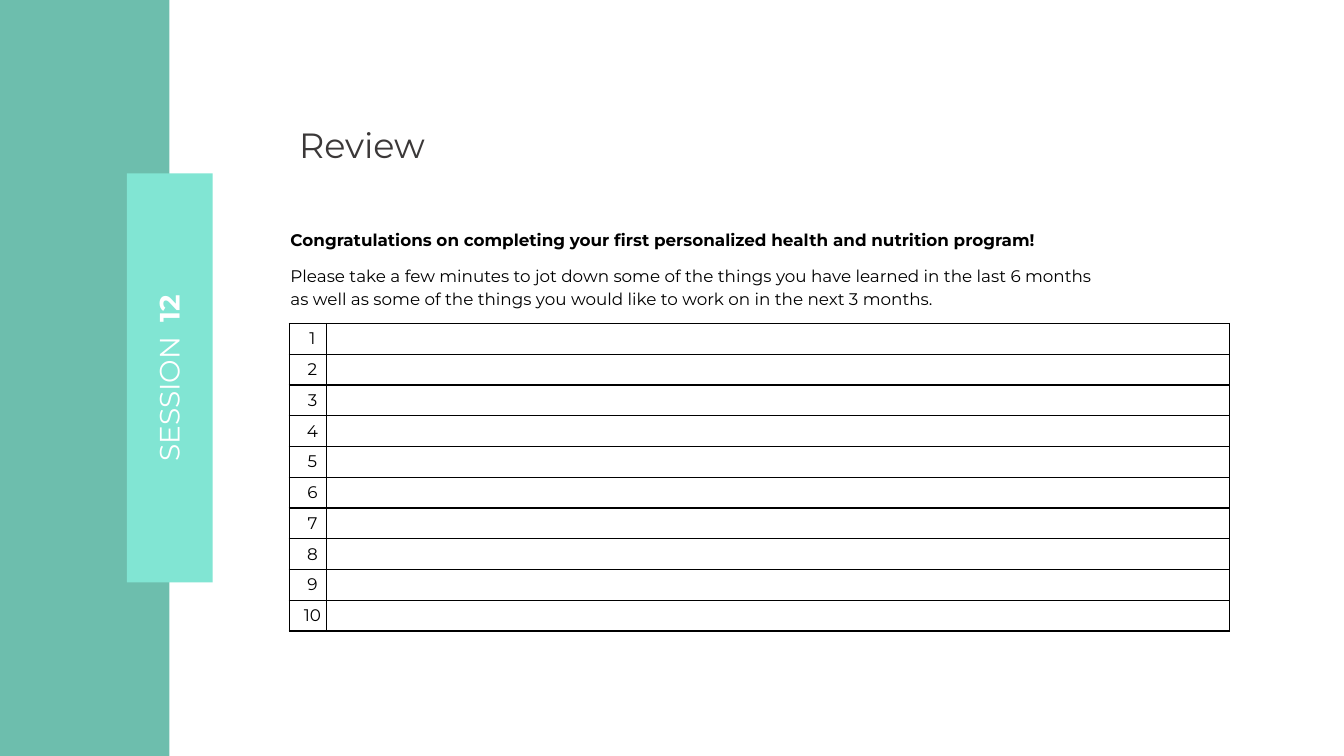
from dataclasses import dataclass

from lxml.etree import SubElement
from pptx import Presentation
from pptx.dml.color import RGBColor
from pptx.enum.shapes import MSO_SHAPE
from pptx.enum.text import MSO_ANCHOR, MSO_AUTO_SIZE, PP_ALIGN
from pptx.oxml.ns import qn
from pptx.util import Cm, Pt


@dataclass(frozen=True)
class Theme:
    """Fonts, colours and type sizes of the slide."""
    font: str = "Montserrat"
    band: str = "6DBEAD"
    tab: str = "81E5D3"
    light: str = "FFFFFF"
    heading: str = "3B3838"
    ink: str = "000000"
    session_size: int = 20
    heading_size: int = 25
    body_size: int = 12
    rule_width: int = 1


THEME = Theme()


def write(paragraph, text, size=THEME.body_size, color=THEME.ink, bold=False, spacing=0):
    """Add a formatted run, with letter spacing in points."""
    run = paragraph.add_run()
    run.text = text
    run.font.name = THEME.font
    run.font.size = Pt(size)
    run.font.bold = bold
    run.font.color.rgb = RGBColor.from_string(color)
    if spacing:
        run.font._element.set("spc", str(round(spacing * 100)))


def indent(paragraph, margin):
    """Set the left margin of a paragraph."""
    paragraph._p.get_or_add_pPr().set("marL", str(Cm(margin)))


class Page:
    """One slide and the theme it is drawn with."""

    def __init__(self, slide, theme):
        """Keep the slide and its theme."""
        self.slide = slide
        self.theme = theme

    def block(self, left, top, width, height, color):
        """Draw a plain filled rectangle."""
        block = self.slide.shapes.add_shape(
            MSO_SHAPE.RECTANGLE, Cm(left), Cm(top), Cm(width), Cm(height))
        block.shadow.inherit = False
        block.fill.solid()
        block.fill.fore_color.rgb = RGBColor.from_string(color)
        block.line.fill.background()

    def text(self, left, top, width, height, rotation=0, wrap=True, inset=None, grow=False):
        """Add a text box and return its text frame."""
        box = self.slide.shapes.add_textbox(Cm(left), Cm(top), Cm(width), Cm(height))
        box.rotation = rotation
        frame = box.text_frame
        frame.word_wrap = wrap
        frame.auto_size = MSO_AUTO_SIZE.SHAPE_TO_FIT_TEXT if grow else MSO_AUTO_SIZE.NONE
        if inset is not None:
            frame.margin_left = frame.margin_right = Cm(inset)
            frame.margin_top = frame.margin_bottom = Cm(inset)
        return frame

    def rule(self, cell):
        """Draw all four borders of a cell and leave it unfilled."""
        properties = cell._tc.get_or_add_tcPr()
        for side in ("a:lnL", "a:lnR", "a:lnT", "a:lnB"):
            border = SubElement(properties, qn(side), w=str(Pt(self.theme.rule_width)))
            SubElement(SubElement(border, qn("a:solidFill")), qn("a:srgbClr"), val=self.theme.ink)
        cell.fill.background()

    def numbered_lines(self, left, top, widths, height, count):
        """Add a table of numbered empty lines to write on."""
        lines = self.slide.shapes.add_table(
            count, len(widths), Cm(left), Cm(top), Cm(sum(widths)), Cm(height)).table
        lines.first_row = lines.horz_banding = False
        for column, width in zip(lines.columns, widths):
            column.width = Cm(width)
        for number, row in enumerate(lines.rows, start=1):
            row.height = Cm(height / count)
            for cell, label in zip(row.cells, (str(number), "")):
                self.rule(cell)
                cell.margin_left = cell.margin_right = 0
                cell.margin_top = cell.margin_bottom = 0
                cell.vertical_anchor = MSO_ANCHOR.MIDDLE
                paragraph = cell.text_frame.paragraphs[0]
                paragraph.alignment = PP_ALIGN.CENTER
                indent(paragraph, 0.23)
                write(paragraph, label, spacing=-0.1 if len(label) > 1 else 0)


def main():
    """Build and save the review slide."""
    deck = Presentation()
    deck.slide_width, deck.slide_height = Cm(33.87), Cm(19.05)
    page = Page(deck.slides.add_slide(deck.slide_layouts[6]), THEME)

    page.block(0, 0, 4.27, 19.05, THEME.band)
    page.block(3.2, 4.37, 2.16, 10.31, THEME.tab)

    session = page.text(1.88, 8.97, 4.75, 1.12, rotation=270, wrap=False, grow=True).paragraphs[0]
    session.alignment = PP_ALIGN.CENTER
    for part, bold, spacing in (("SESSION", False, 0), (" ", False, 5.2), ("12", True, 0)):
        write(session, part, size=THEME.session_size, color=THEME.light, bold=bold, spacing=spacing)

    heading = page.text(7.29, 3, 7.39, 1.32, grow=True).paragraphs[0]
    write(heading, "Review", size=THEME.heading_size, color=THEME.heading)

    intro = page.text(7.29, 5.79, 23.7, 3.1, inset=0)
    praise, request = intro.paragraphs[0], intro.add_paragraph()
    indent(praise, 0.03)
    write(praise, "Congratulations on completing your first personalized health and nutrition program!",
          bold=True)
    indent(request, 0.03)
    request.space_before = Pt(9.5)
    request.line_spacing = 1.14
    write(request, "Please take a few minutes to jot down some of the things "
                   "you have learned in the last 6 months ")
    request.add_line_break()
    write(request, "as well as some of the things you would like to work on in the next 3 months.")

    page.numbered_lines(7.29, 8.15, (0.94, 22.76), 7.75, 10)
    deck.save("out.pptx")


if __name__ == "__main__":
    main()
